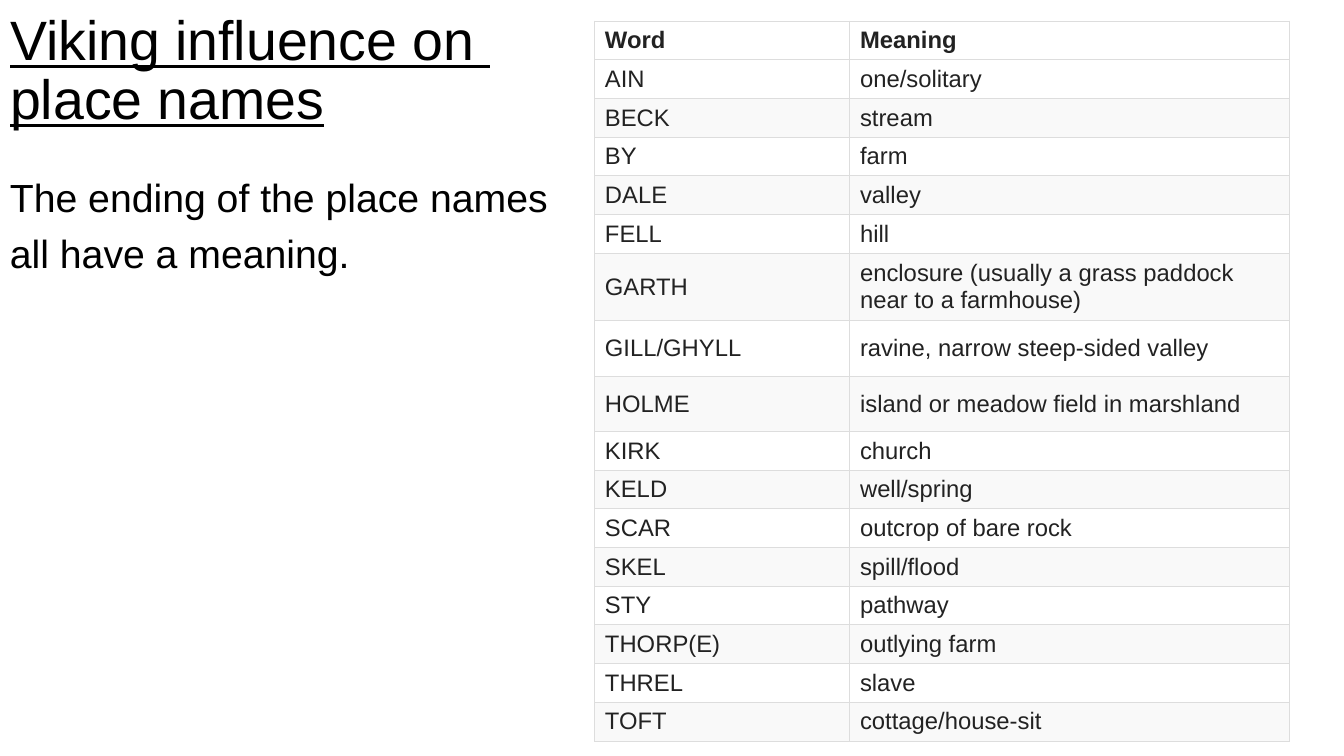
from pptx import Presentation
from pptx import util as u
from pptx.dml.color import RGBColor
from pptx.enum import text
from pptx.oxml import parse_xml
from pptx.oxml.ns import nsdecls

COLORS = {"black": "000000", "ink": "222222", "border": "DDDDDD",
          "plain": "FFFFFF", "band": "F9F9F9"}
FONT = "Arial"
WIDTH, HEIGHT = u.Inches(13.33), u.Inches(7.5)
MARGIN_TOP = u.Inches(0.21)
TABLE_LEFT = u.Inches(5.9)
COLUMN_WIDTHS = (2.53, 4.36)
ROW_HEIGHT = 0.36
TALL_ROWS = {"GARTH": 0.63, "GILL/GHYLL": 0.55, "HOLME": 0.55}

PLACE_WORDS = [
    ("Word", "Meaning"),
    ("AIN", "one/solitary"),
    ("BECK", "stream"),
    ("BY", "farm"),
    ("DALE", "valley"),
    ("FELL", "hill"),
    ("GARTH", "enclosure (usually a grass paddock near to a farmhouse)"),
    ("GILL/GHYLL", "ravine, narrow steep-sided valley"),
    ("HOLME", "island or meadow field in marshland"),
    ("KIRK", "church"),
    ("KELD", "well/spring"),
    ("SCAR", "outcrop of bare rock"),
    ("SKEL", "spill/flood"),
    ("STY", "pathway"),
    ("THORP(E)", "outlying farm"),
    ("THREL", "slave"),
    ("TOFT", "cottage/house-sit"),
]


def style_paragraph(paragraph, size, color, bold=False):
    paragraph.alignment = text.PP_ALIGN.LEFT
    paragraph.font.name = FONT
    paragraph.font.size = u.Pt(size)
    paragraph.font.bold = bold
    paragraph.font.color.rgb = RGBColor.from_string(COLORS[color])


def add_heading(slide, left, top, width, height):
    title = slide.shapes.title
    title.left, title.top, title.width, title.height = left, top, width, height
    frame = title.text_frame
    frame.text = "Viking influence on \vplace names"
    frame.word_wrap = True
    frame.auto_size = text.MSO_AUTO_SIZE.NONE
    frame.vertical_anchor = text.MSO_ANCHOR.MIDDLE
    paragraph = frame.paragraphs[0]
    style_paragraph(paragraph, 39.6, "black")
    paragraph.font.underline = True
    paragraph.line_spacing = 0.9


def add_explanation(slide, left, top, width, height):
    frame = slide.shapes.add_textbox(left, top, width, height).text_frame
    frame.word_wrap = True
    frame.text = "The ending of the place names\nall have a meaning."
    for paragraph in frame.paragraphs:
        style_paragraph(paragraph, 28, "black")
        paragraph.line_spacing = 0.9
        paragraph.space_before = u.Pt(10)


def add_borders(cell):
    properties = cell._tc.get_or_add_tcPr()
    for position, side in enumerate(("lnL", "lnR", "lnT", "lnB")):
        properties.insert(position, parse_xml(
            f'<a:{side} {nsdecls("a")} w="9525"><a:solidFill>'
            f'<a:srgbClr val="{COLORS["border"]}"/></a:solidFill></a:{side}>'))


def add_word_table(slide, left, top, width, height):
    table = slide.shapes.add_table(
        len(PLACE_WORDS), len(COLUMN_WIDTHS), left, top, width, height).table
    table.horz_banding = False
    for column, column_width in zip(table.columns, COLUMN_WIDTHS):
        column.width = u.Inches(column_width)
    for index, (row, entry) in enumerate(zip(table.rows, PLACE_WORDS)):
        row.height = u.Inches(TALL_ROWS.get(entry[0], ROW_HEIGHT))
        fill = "band" if index and index % 2 == 0 else "plain"
        for cell, wording in zip(row.cells, entry):
            cell.text = wording
            cell.vertical_anchor = text.MSO_ANCHOR.MIDDLE
            cell.fill.solid()
            cell.fill.fore_color.rgb = RGBColor.from_string(COLORS[fill])
            style_paragraph(cell.text_frame.paragraphs[0], 17, "ink", index == 0)
            add_borders(cell)


def main():
    presentation = Presentation()
    presentation.slide_width, presentation.slide_height = WIDTH, HEIGHT
    slide = presentation.slides.add_slide(presentation.slide_layouts[5])
    add_heading(slide, 0, MARGIN_TOP, TABLE_LEFT, u.Inches(1.01))
    add_explanation(slide, 0, u.Inches(1.72), TABLE_LEFT, u.Inches(1.2))
    add_word_table(slide, TABLE_LEFT, MARGIN_TOP,
                   u.Inches(sum(COLUMN_WIDTHS)), u.Inches(6.77))
    presentation.save("out.pptx")


if __name__ == "__main__":
    main()
